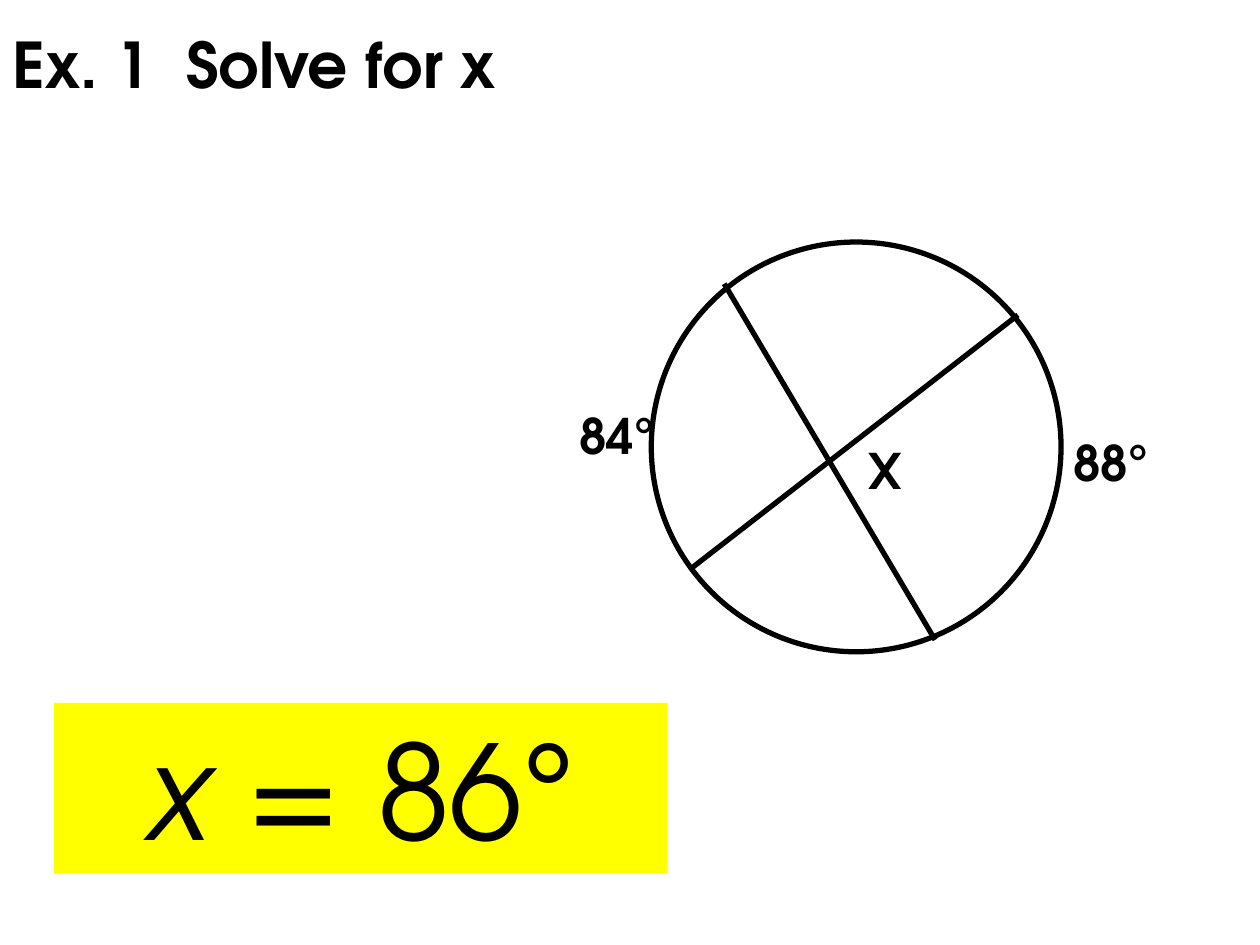
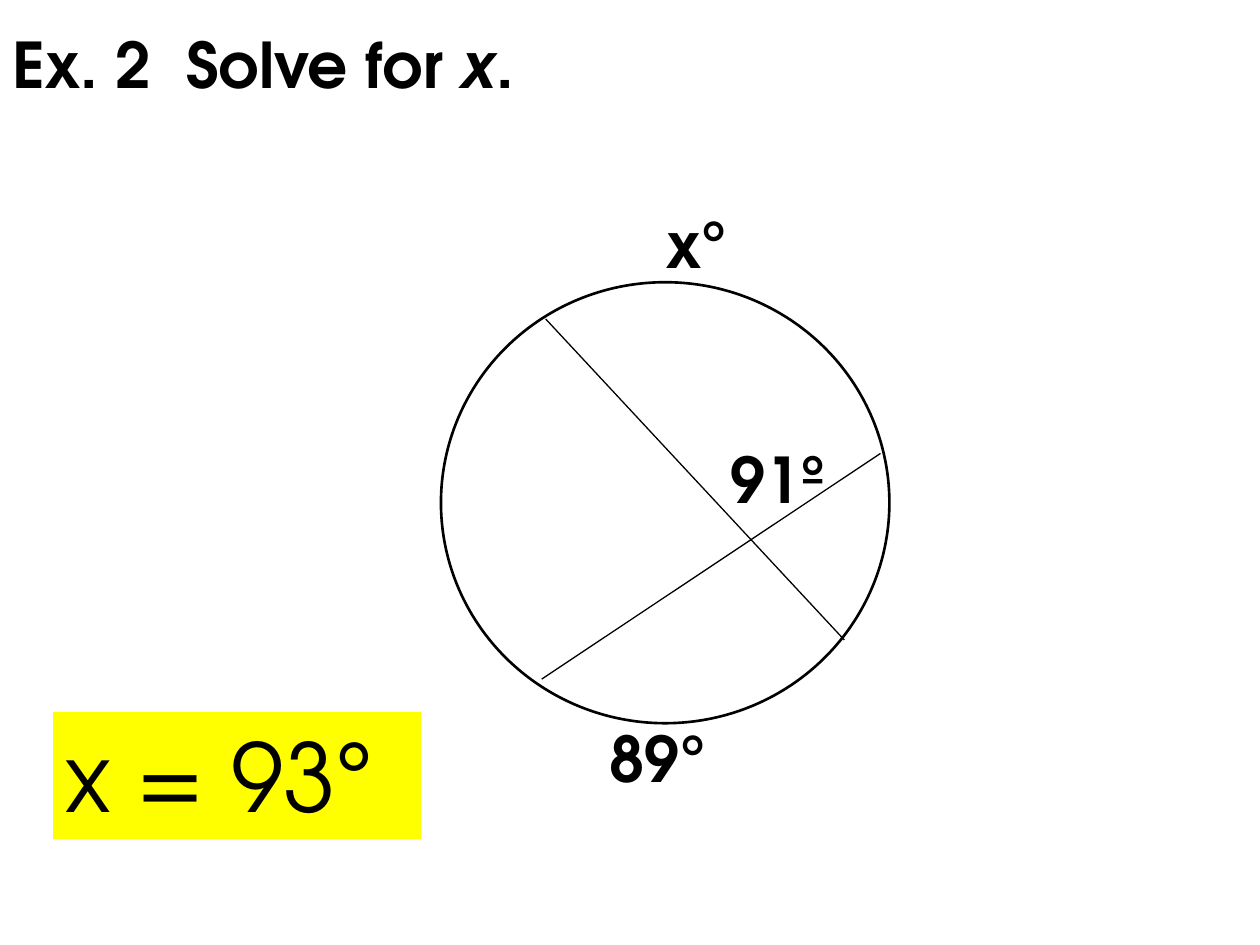
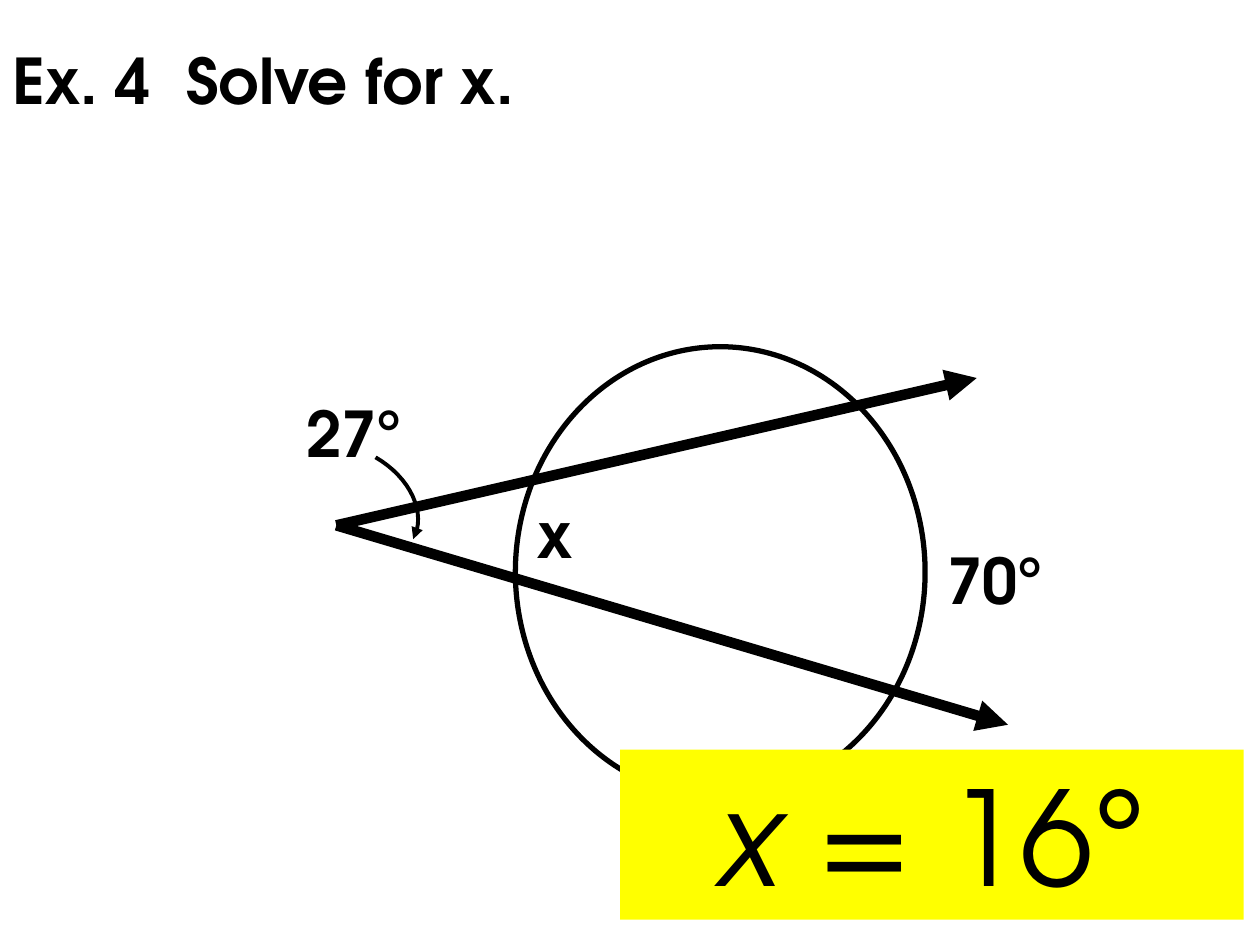
"""Build three worked examples on the angles and arcs of a circle."""
from dataclasses import dataclass
from typing import Optional

from lxml import etree
from pptx import Presentation
from pptx.dml.color import RGBColor
from pptx.enum.shapes import MSO_CONNECTOR, MSO_SHAPE
from pptx.enum.text import MSO_ANCHOR, PP_ALIGN
from pptx.oxml.ns import qn
from pptx.util import Cm, Pt

STRAIGHT = MSO_CONNECTOR.STRAIGHT
OVAL = MSO_SHAPE.OVAL
TOP, MIDDLE = MSO_ANCHOR.TOP, MSO_ANCHOR.MIDDLE
LEFT, CENTER = PP_ALIGN.LEFT, PP_ALIGN.CENTER
BLANK_LAYOUT = 6
CURVE_STEPS = 16

Point = tuple[float, float]


@dataclass(frozen=True)
class Theme:
    """Font, colours and type sizes of all slides."""
    font: str = "TeX Gyre Adventor"
    ink: RGBColor = RGBColor(0, 0, 0)
    paper: RGBColor = RGBColor(255, 255, 255)
    highlight: RGBColor = RGBColor(255, 255, 0)
    title_size: int = 36
    small_label_size: int = 28
    label_size: int = 36
    answer_size: int = 54
    large_answer_size: int = 75


THEME = Theme()


@dataclass(frozen=True)
class Box:
    """Position and size in centimetres."""
    left: float
    top: float
    width: float
    height: float

    def lengths(self) -> tuple[Cm, Cm, Cm, Cm]:
        """Return the four measures as lengths."""
        return Cm(self.left), Cm(self.top), Cm(self.width), Cm(self.height)


@dataclass(frozen=True)
class Words:
    """Text in one style, with marked words in italics."""
    box: Box
    phrases: tuple[str, ...]
    size: int
    italic: str = ""
    bold: bool = True
    wrap: bool = True
    anchor: MSO_ANCHOR = TOP
    align: PP_ALIGN = LEFT
    fill: Optional[RGBColor] = None


@dataclass(frozen=True)
class Circle:
    """Outlined circle."""
    box: Box
    weight: float
    fill: Optional[RGBColor] = None


@dataclass(frozen=True)
class Segment:
    """Chord, or ray if it has an arrowhead."""
    start: Point
    end: Point
    weight: float
    arrow: bool = False


@dataclass(frozen=True)
class Pointer:
    """Curved arrow given by four Bezier points."""
    points: tuple[Point, Point, Point, Point]
    weight: float


@dataclass(frozen=True)
class Example:
    """One slide, with its elements from back to front."""
    title: Words
    circle: Circle
    segments: tuple[Segment, ...]
    labels: tuple[Words, ...]
    answer: Words
    pointer: Optional[Pointer] = None


def title(box: Box, *phrases: str) -> Words:
    """Describe a slide title."""
    return Words(box, phrases, THEME.title_size, italic="x", anchor=MIDDLE)


def small_label(left: float, top: float, width: float, text: str) -> Words:
    """Describe a small label that fits its text."""
    return Words(Box(left, top, width, 1.45), (text,), THEME.small_label_size, wrap=False)


def wide_label(left: float, top: float, text: str) -> Words:
    """Describe a label in a roomy box."""
    return Words(Box(left, top, 6.02, 4.04), (text,), THEME.label_size)


def tight_label(left: float, top: float, width: float, text: str) -> Words:
    """Describe a label that fits its text."""
    return Words(Box(left, top, width, 1.8), (text,), THEME.label_size, wrap=False)


def large_answer(left: float, top: float, width: float, value: str) -> Words:
    """Describe a large centred answer on the highlight colour."""
    return Words(Box(left, top, width, 3.43), ("x ", value), THEME.large_answer_size,
                 italic="x ", bold=False, align=CENTER, fill=THEME.highlight)


VERTEX = (6.78, 10.59)

EXAMPLES = (
    Example(
        title(Box(0, 0, 10.36, 2.54), "Ex. 1  Solve for x"),
        Circle(Box(13.13, 4.88, 8.26, 8.26), 3),
        (Segment((14.6, 5.72), (18.85, 12.9), 3),
         Segment((13.97, 11.43), (20.52, 6.35), 3)),
        (small_label(17.25, 8.76, 1.24, "X"),
         small_label(21.39, 8.59, 2.03, "88°"),
         small_label(11.43, 8.05, 2.03, "84°")),
        large_answer(1.09, 14.17, 12.37, "= 86°"),
    ),
    Example(
        title(Box(0, 0, 11.43, 2.54), "Ex. 2  Solve for ", "x", "."),
        Circle(Box(8.89, 5.69, 9.04, 8.89), 1.5, THEME.paper),
        (Segment((11, 6.43), (17.02, 12.9), 0.75),
         Segment((17.75, 9.14), (10.92, 13.69), 0.75)),
        (wide_label(13.18, 4.01, "x°"),
         wide_label(14.48, 8.76, "91º"),
         wide_label(12.04, 14.38, "89°")),
        Words(Box(1.07, 14.35, 7.42, 2.57), ("x = 93°",), THEME.answer_size,
              bold=False, fill=THEME.highlight),
    ),
    Example(
        title(Box(0, 0.64, 19.89, 1.9), "Ex. 4  Solve for x."),
        Circle(Box(10.39, 6.99, 8.26, 9.09), 3),
        (Segment(VERTEX, (20.32, 14.61), 6, arrow=True),
         Segment(VERTEX, (19.69, 7.62), 6, arrow=True)),
        (tight_label(10.59, 9.86, 1.22, "x"),
         Words(Box(5.92, 7.82, 3.61, 1.8), ("27°",), THEME.label_size),
         tight_label(18.85, 10.8, 2.46, "70°")),
        large_answer(12.5, 15.11, 12.57, "= 16°"),
        Pointer(((7.57, 9.22), (8.28, 9.63), (8.61, 10.36), (8.33, 10.87)), 2.25),
    ),
)


def set_fill(shape, color: Optional[RGBColor]) -> None:
    """Fill a shape with a colour, or leave it clear."""
    if color is None:
        shape.fill.background()
    else:
        shape.fill.solid()
        shape.fill.fore_color.rgb = color


def set_line(shape, weight: float, arrow: bool = False) -> None:
    """Draw a line in ink, with an arrowhead at its end if asked."""
    shape.line.color.rgb = THEME.ink
    shape.line.width = Pt(weight)
    if arrow:
        line = shape.element.spPr.find(qn("a:ln"))
        etree.SubElement(line, qn("a:tailEnd"), type="triangle")


def draw_words(slide, words: Words) -> None:
    """Add a text box."""
    shape = slide.shapes.add_textbox(*words.box.lengths())
    set_fill(shape, words.fill)
    text_frame = shape.text_frame
    text_frame.word_wrap = words.wrap
    text_frame.vertical_anchor = words.anchor
    paragraph = text_frame.paragraphs[0]
    paragraph.alignment = words.align
    for phrase in words.phrases:
        run = paragraph.add_run()
        run.text = phrase
        run.font.name = THEME.font
        run.font.size = Pt(words.size)
        run.font.color.rgb = THEME.ink
        run.font.bold = words.bold
        run.font.italic = phrase == words.italic


def draw_circle(slide, circle: Circle) -> None:
    """Add a circle."""
    shape = slide.shapes.add_shape(OVAL, *circle.box.lengths())
    shape.shadow.inherit = False
    set_fill(shape, circle.fill)
    set_line(shape, circle.weight)


def draw_segment(slide, segment: Segment) -> None:
    """Add a straight connector."""
    ends = (Cm(value) for value in segment.start + segment.end)
    connector = slide.shapes.add_connector(STRAIGHT, *ends)
    set_line(connector, segment.weight, segment.arrow)
    etree.SubElement(connector.element.spPr, qn("a:effectLst"))


def curve_point(points: tuple[Point, ...], position: float) -> tuple[Cm, Cm]:
    """Return the point of a cubic Bezier curve at a position from 0 to 1."""
    rest = 1 - position
    weights = (rest ** 3, 3 * rest ** 2 * position, 3 * rest * position ** 2, position ** 3)
    x, y = (sum(weight * value for weight, value in zip(weights, axis))
            for axis in zip(*points))
    return Cm(x), Cm(y)


def draw_pointer(slide, pointer: Pointer) -> None:
    """Add a curved arrow."""
    start, *others = (curve_point(pointer.points, step / CURVE_STEPS)
                      for step in range(CURVE_STEPS + 1))
    builder = slide.shapes.build_freeform(*start)
    builder.add_line_segments(others, close=False)
    shape = builder.convert_to_shape()
    shape.shadow.inherit = False
    set_fill(shape, None)
    set_line(shape, pointer.weight, arrow=True)


def draw_example(slide, example: Example) -> None:
    """Draw all elements of an example."""
    draw_words(slide, example.title)
    draw_circle(slide, example.circle)
    for segment in example.segments:
        draw_segment(slide, segment)
    for label in example.labels:
        draw_words(slide, label)
    if example.pointer:
        draw_pointer(slide, example.pointer)
    draw_words(slide, example.answer)


def main() -> None:
    """Build and save the presentation."""
    presentation = Presentation()
    presentation.slide_width = Cm(25.4)
    presentation.slide_height = Cm(19.05)
    for example in EXAMPLES:
        slide = presentation.slides.add_slide(presentation.slide_layouts[BLANK_LAYOUT])
        draw_example(slide, example)
    presentation.save("out.pptx")


if __name__ == "__main__":
    main()
